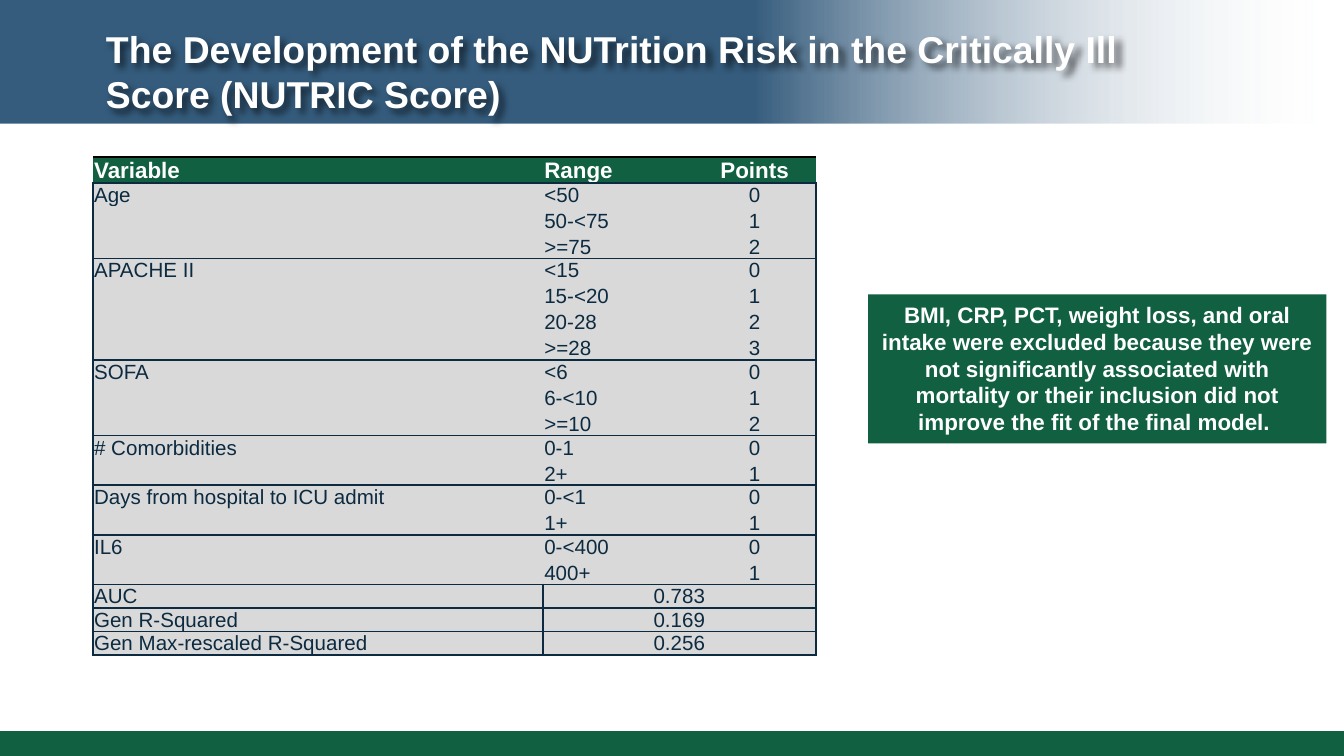
import pptx
import pptx.util
import pptx.dml.color
import pptx.enum.shapes
import pptx.enum.text
import pptx.oxml
import pptx.oxml.ns
from lxml import etree
from pptx.util import Inches

GREEN, NAVY, GREY, WHITE, BLACK = "106041", "0C2A40", "D9D9D9", "FFFFFF", "000000"
LEFT = pptx.enum.text.PP_ALIGN.LEFT
CENTER = pptx.enum.text.PP_ALIGN.CENTER
TOP = pptx.enum.text.MSO_ANCHOR.TOP
MIDDLE = pptx.enum.text.MSO_ANCHOR.MIDDLE
BOTTOM = pptx.enum.text.MSO_ANCHOR.BOTTOM

VARIABLES = [
    ("Age", ["<50", "50-<75", ">=75"]),
    ("APACHE II", ["<15", "15-<20", "20-28", ">=28"]),
    ("SOFA", ["<6", "6-<10", ">=10"]),
    ("# Comorbidities", ["0-1", "2+"]),
    ("Days from hospital to ICU admit", ["0-<1", "1+"]),
    ("IL6", ["0-<400", "400+"]),
]
MODEL_FIT = [("AUC", "0.783"), ("Gen R-Squared", "0.169"), ("Gen Max-rescaled R-Squared ", "0.256")]


def color(value):
    """Return the colour for a hex string."""
    return pptx.dml.color.RGBColor.from_string(value)


def add_xml(parent, markup):
    """Append DrawingML markup to an element."""
    namespace = pptx.oxml.ns.nsdecls("a")
    parent.append(pptx.oxml.parse_xml(markup.replace(">", f" {namespace}>", 1)))


def write(frame, text, size, hex_color, bold=False, align=LEFT):
    """Write one formatted paragraph into a text frame."""
    frame.word_wrap = True
    paragraph = frame.paragraphs[0]
    paragraph.text = text
    paragraph.alignment = align
    paragraph.font.name = "Arial"
    paragraph.font.size = pptx.util.Pt(size)
    paragraph.font.bold = bold
    paragraph.font.color.rgb = color(hex_color)
    return paragraph


def add_rectangle(slide, left, top, width, height, fill):
    """Add a flat rectangle without outline or shadow."""
    shape = slide.shapes.add_shape(
        pptx.enum.shapes.MSO_SHAPE.RECTANGLE, Inches(left), Inches(top), Inches(width), Inches(height))
    shape.shadow.inherit = False
    shape.line.fill.background()
    shape.fill.solid()
    shape.fill.fore_color.rgb = color(fill)
    return shape


def add_banner(slide):
    """Add the header band that fades out to the right."""
    banner = add_rectangle(slide, 0, 0, 10, 0.92, WHITE)
    banner.fill.gradient()
    banner.fill.gradient_angle = 0
    stops = banner.fill.gradient_stops
    for stop, position, value in zip(stops, (0.56, 1), ("113F66", WHITE)):
        stop.position = position
        stop.color.rgb = color(value)
    stop_colors = banner._element.spPr.iter(pptx.oxml.ns.qn("a:srgbClr"))
    for stop_color, opacity in zip(list(stop_colors), (84, 0)):
        add_xml(stop_color, f'<a:alpha val="{opacity * 1000}"></a:alpha>')


def add_title(slide, text):
    """Add the title with a soft shadow behind its letters."""
    title = slide.shapes.add_textbox(Inches(0.69), Inches(0.06), Inches(7.81), Inches(0.94))
    title.text_frame.vertical_anchor = MIDDLE
    write(title.text_frame, text, 20, WHITE, True)
    add_xml(title._element.spPr,
            '<a:effectLst><a:outerShdw blurRad="50800" dist="38100" dir="2700000">'
            '<a:srgbClr val="000000"><a:alpha val="60000"/></a:srgbClr></a:outerShdw></a:effectLst>')


def add_note(slide, text):
    """Add the green note beside the table."""
    note = add_rectangle(slide, 6.46, 2.19, 3.41, 1.11, GREEN)
    note.text_frame.vertical_anchor = TOP
    note.text_frame.auto_size = pptx.enum.text.MSO_AUTO_SIZE.SHAPE_TO_FIT_TEXT
    write(note.text_frame, text, 12, WHITE, True, CENTER)


def set_borders(cell, sides):
    """Draw the given sides of a cell and hide the others."""
    properties = cell._tc.get_or_add_tcPr()
    for index, side in enumerate("LRTB"):
        fill = f'<a:solidFill><a:srgbClr val="{sides[side]}"/></a:solidFill>' if side in sides else "<a:noFill/>"
        properties.insert(index, pptx.oxml.parse_xml(
            f'<a:ln{side} w="12700" {pptx.oxml.ns.nsdecls("a")}>{fill}</a:ln{side}>'))


def fill_cell(cell, text, sides, align=LEFT, header=False):
    """Fill, write and border one table cell."""
    cell.margin_left = cell.margin_right = cell.margin_top = Inches(0.01)
    cell.margin_bottom = 0
    cell.vertical_anchor = BOTTOM
    cell.fill.solid()
    cell.fill.fore_color.rgb = color(GREEN if header else GREY)
    size = 12 if header else 11
    paragraph = write(cell.text_frame, text, size, WHITE if header else NAVY, header, align)
    paragraph.line_spacing = 0.9
    if not text:
        etree.SubElement(paragraph._p, pptx.oxml.ns.qn("a:endParaRPr"), sz=str(size * 100))
    set_borders(cell, sides)


def add_score_table(slide):
    """Add the table of score variables, ranges and points."""
    row_count = 1 + sum(len(ranges) for _, ranges in VARIABLES) + len(MODEL_FIT)
    table = slide.shapes.add_table(
        row_count, 3, Inches(0.69), Inches(1.17), Inches(5.38), Inches(3.01)).table
    table.horz_banding = False
    for column, width in zip(table.columns, (3.35, 1.12, 0.91)):
        column.width = Inches(width)
    for index, row in enumerate(table.rows):
        row.height = Inches(0.15 if index else 0.16)
    aligns = (LEFT, LEFT, CENTER)
    for column, text in enumerate(("Variable", "Range", "Points")):
        fill_cell(table.cell(0, column), text, {"T": BLACK, "B": NAVY}, aligns[column], True)
    outer = ({"L": NAVY}, {}, {"R": NAVY})
    row = 1
    for name, ranges in VARIABLES:
        for points, value in enumerate(ranges):
            edges = {}
            if points == 0:
                edges["T"] = NAVY
            if points == len(ranges) - 1:
                edges["B"] = NAVY
            texts = ("" if points else name, value, str(points))
            for column, text in enumerate(texts):
                fill_cell(table.cell(row, column), text, {**edges, **outer[column]}, aligns[column])
            row += 1
    box = dict.fromkeys("LRTB", NAVY)
    for row, (name, value) in enumerate(MODEL_FIT, row):
        table.cell(row, 1).merge(table.cell(row, 2))
        fill_cell(table.cell(row, 0), name, box)
        fill_cell(table.cell(row, 1), value, box, CENTER)
        set_borders(table.cell(row, 2), box)


def main():
    """Build the slide and save it."""
    presentation = pptx.Presentation()
    presentation.slide_width = Inches(10)
    presentation.slide_height = Inches(10 * 9 / 16)
    slide = presentation.slides.add_slide(presentation.slide_layouts[6])
    add_banner(slide)
    add_rectangle(slide, 0, 5.44, 10, 0.19, GREEN)
    add_title(slide, "The Development of the NUTrition Risk in the Critically Ill Score (NUTRIC Score)")
    add_score_table(slide)
    add_note(slide, "BMI, CRP, PCT, weight loss, and oral intake were excluded because they were not "
                    "significantly associated with mortality or their inclusion did not improve the "
                    "fit of the final model. ")
    presentation.save("out.pptx")


if __name__ == "__main__":
    main()
